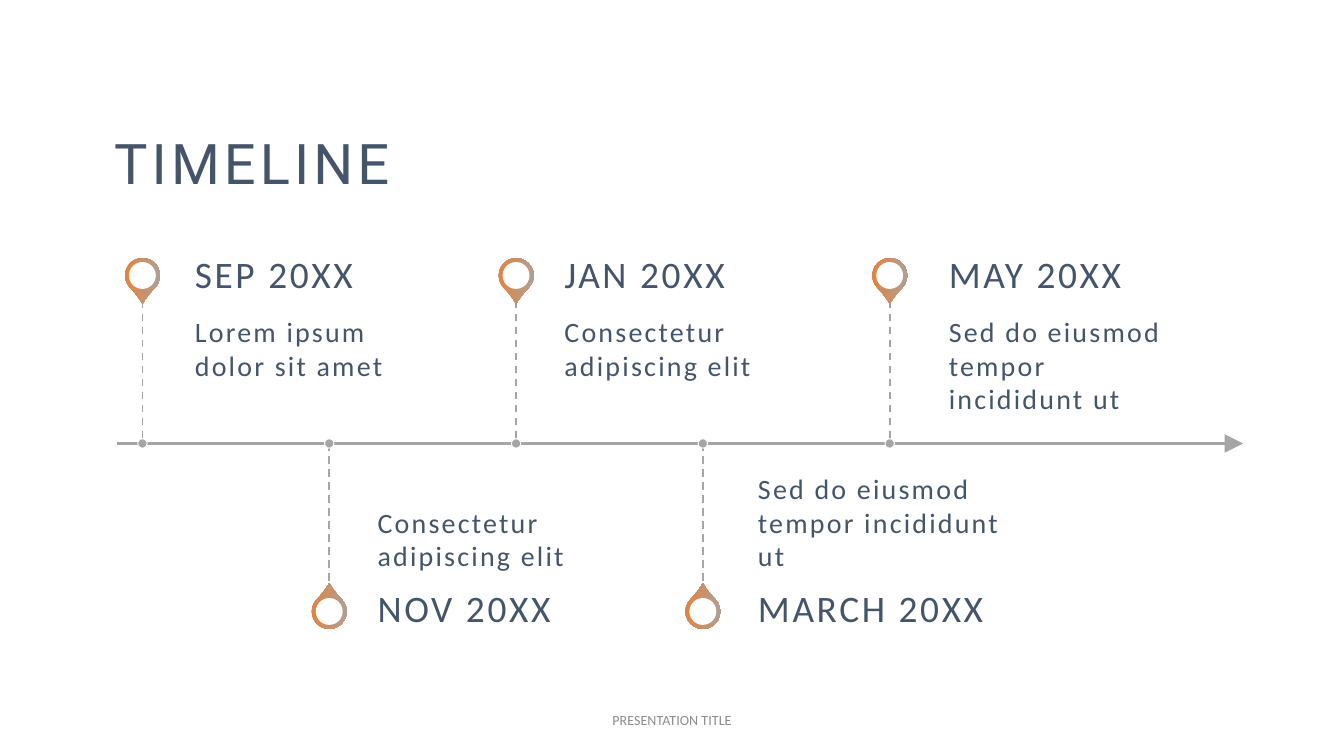
import pptx
import pptx.dml.color
import pptx.enum.dml
import pptx.enum.shapes
import pptx.enum.text
import pptx.oxml.ns
import pptx.util
from lxml import etree

Inches, Pt = pptx.util.Inches, pptx.util.Pt
Shape = pptx.enum.shapes.MSO_SHAPE
Anchor = pptx.enum.text.MSO_ANCHOR
Align = pptx.enum.text.PP_ALIGN
STRAIGHT = pptx.enum.shapes.MSO_CONNECTOR.STRAIGHT
DASH = pptx.enum.dml.MSO_LINE.DASH
qn = pptx.oxml.ns.qn

NAVY, GREY, ORANGE, WHITE = "44546A", "A5A5A5", "ED7D31", "FFFFFF"


def paint(fill, *colors):
    """Fill with one colour, or with a left-to-right gradient of two."""
    rgb = [pptx.dml.color.RGBColor.from_string(color) for color in colors]
    if len(rgb) == 1:
        fill.solid()
        fill.fore_color.rgb = rgb[0]
        return
    fill.gradient()
    fill.gradient_angle = 0
    for stop, color, position in zip(fill.gradient_stops, rgb, (0, 1)):
        stop.color.rgb = color
        stop.position = position


def write(shape, box, text, size, color=NAVY, font="Calibri", tracking=0,
          line_spacing=1.0, alignment=Align.LEFT, **frame_format):
    """Place a text shape at box, in inches, and set its text and format."""
    for name, value in zip(("left", "top", "width", "height"), box):
        setattr(shape, name, Inches(value))
    frame = shape.text_frame
    settings = {"word_wrap": True, "auto_size": pptx.enum.text.MSO_AUTO_SIZE.NONE,
                "vertical_anchor": Anchor.MIDDLE, **frame_format}
    for name, value in settings.items():
        setattr(frame, name, value)
    paragraph = frame.paragraphs[0]
    paragraph.alignment = alignment
    paragraph.line_spacing = line_spacing
    run = paragraph.add_run()
    run.text = text
    for name, value in {"size": Pt(size), "name": font}.items():
        setattr(run.font, name, value)
    paint(run.font.fill, color)
    if tracking:
        run.font._element.set("spc", str(round(tracking * 100)))


presentation = pptx.Presentation()
presentation.slide_width = Inches(10)
presentation.slide_height = presentation.slide_width * 9 // 16
slide = presentation.slides.add_slide(presentation.slide_layouts[5])
shapes = slide.shapes

write(shapes.title, (0.75, 0.8, 6.93, 0.88), "TIMELINE", 30,
      font="Roboto", tracking=2.2, line_spacing=0.9)
write(shapes.add_textbox(0, 0, 0, 0), (3.31, 5.21, 3.38, 0.3),
      "PRESENTATION TITLE", 7.5, color="8C8C8C", alignment=Align.CENTER)

# Time axis
AXIS = 3.3
axis = shapes.add_connector(STRAIGHT, Inches(0.87), Inches(AXIS), Inches(9.25), Inches(AXIS))
axis.line.width = Pt(1.5)
paint(axis.line.fill, GREY)
etree.SubElement(axis.line._get_or_add_ln(), qn("a:tailEnd"),
                 type="triangle", w="lg", len="lg")

# Milestones alternate above and below the axis, one column apart
FIRST, COLUMN = 1.06, 1.39
STEM, HEADING, PIN_OFFSET = 1.06, 0.37, 1.25
PIN, HOLE, DOT = 0.26, 0.2, 0.07

milestones = [
    # heading, description, text left, text width
    ("SEP 20XX", "Lorem ipsum dolor sit amet", 1.45, 1.91),
    ("NOV 20XX", "Consectetur adipiscing elit", 2.81, 1.97),
    ("JAN 20XX", "Consectetur adipiscing elit", 4.2, 1.94),
    ("MARCH 20XX", "Sed do eiusmod tempor incididunt ut", 5.64, 1.9),
    ("MAY 20XX", "Sed do eiusmod tempor incididunt ut", 7.06, 1.9),
]

for index, (heading, description, left, width) in enumerate(milestones):
    above = index % 2 == 0
    side = -1 if above else 1
    center = FIRST + index * COLUMN
    stem_end = AXIS + side * STEM
    pin_center = AXIS + side * PIN_OFFSET

    stem = shapes.add_connector(STRAIGHT, Inches(center), Inches(min(AXIS, stem_end)),
                                Inches(center), Inches(max(AXIS, stem_end)))
    stem.line.width = Pt(1)
    stem.line.dash_style = DASH
    paint(stem.line.fill, GREY)

    for kind, size, middle, colors in (
        (Shape.TEAR, PIN, pin_center, (ORANGE, GREY)),
        (Shape.OVAL, HOLE, pin_center, (WHITE,)),
        (Shape.OVAL, DOT, AXIS, (GREY,)),
    ):
        marker = shapes.add_shape(kind, Inches(center - size / 2), Inches(middle - size / 2),
                                  Inches(size), Inches(size))
        marker.shadow.inherit = False
        paint(marker.fill, *colors)
        marker.line.fill.background()
        if kind == Shape.TEAR:
            marker.adjustments[0] = 1.15
            marker.rotation = 135 if above else 315
            # The gradient stays level while the pin turns
            marker._element.spPr.find(qn("a:gradFill")).set("rotWithShape", "0")
    # The last marker is the dot on the axis
    marker.line.width = Pt(0.5)
    paint(marker.line.fill, WHITE)

    near_heading, near_axis = Inches(0.1), Inches(0.16)
    write(shapes.add_textbox(0, 0, 0, 0), (left, min(AXIS, stem_end), width, STEM),
          description, 15, tracking=1.2,
          vertical_anchor=Anchor.TOP if above else Anchor.BOTTOM,
          margin_left=0, margin_right=near_heading if above else 0,
          margin_top=near_heading if above else near_axis,
          margin_bottom=near_axis if above else near_heading)
    write(shapes.add_textbox(0, 0, 0, 0),
          (left, stem_end - HEADING if above else stem_end, width, HEADING),
          heading, 20, tracking=1.4, line_spacing=0.9,
          margin_left=0, margin_right=Inches(0.14), margin_top=0, margin_bottom=0)

for shape in shapes:
    if shape.shape_type == pptx.enum.shapes.MSO_SHAPE_TYPE.LINE:
        etree.SubElement(shape._element.spPr, qn("a:effectLst"))

presentation.save("out.pptx")
